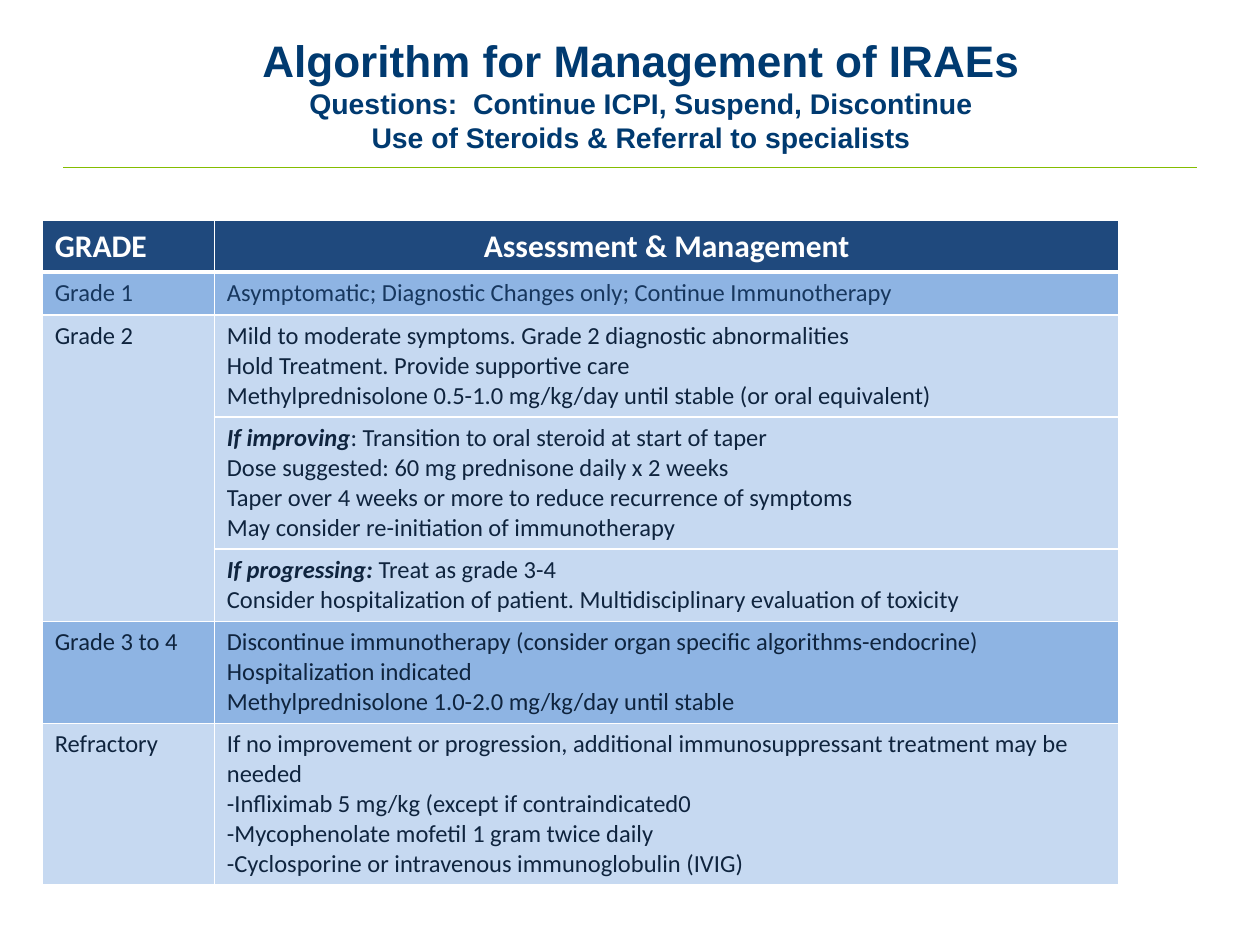
from lxml import etree
from pptx import Presentation
from pptx.dml.color import RGBColor
from pptx.enum.shapes import MSO_CONNECTOR
from pptx.enum.text import MSO_ANCHOR, MSO_AUTO_SIZE, PP_ALIGN
from pptx.oxml.ns import qn
from pptx.util import Cm, Pt

CENTER, LEFT = PP_ALIGN.CENTER, PP_ALIGN.LEFT
MIDDLE = MSO_ANCHOR.MIDDLE
NO_AUTOFIT = MSO_AUTO_SIZE.NONE
STRAIGHT = MSO_CONNECTOR.STRAIGHT

NAVY, GREEN, WHITE = "003A70", "84BD00", "FFFFFF"
HEADER_BLUE, MID_BLUE, PALE_BLUE = "1F497D", "8EB4E3", "C6D9F1"
GRADE_1_INK, INK = "17375E", "0F243E"

TITLE = [
    ("Algorithm for Management of IRAEs", 25.2),
    ("Questions:  Continue ICPI, Suspend, Discontinue", 16.2),
    ("Use of Steroids & Referral to specialists", 16.2),
]
HEADINGS = [("GRADE", LEFT), ("Assessment & Management", CENTER)]
GRADES = [
    ("Grade 1", MID_BLUE, GRADE_1_INK, [
        ("", ["Asymptomatic; Diagnostic Changes only; Continue Immunotherapy"]),
    ]),
    ("Grade 2", PALE_BLUE, INK, [
        ("", ["Mild to moderate symptoms. Grade 2 diagnostic abnormalities",
              "Hold Treatment. Provide supportive care",
              "Methylprednisolone 0.5-1.0 mg/kg/day until stable (or oral equivalent)"]),
        ("If improving", [": Transition to oral steroid at start of taper",
                          "Dose suggested: 60 mg prednisone daily x 2 weeks",
                          "Taper over 4 weeks or more to reduce recurrence of symptoms",
                          "May consider re-initiation of immunotherapy"]),
        ("If progressing: ", ["Treat as grade 3-4",
                              "Consider hospitalization of patient. "
                              "Multidisciplinary evaluation of toxicity"]),
    ]),
    ("Grade 3 to 4", MID_BLUE, INK, [
        ("", ["Discontinue immunotherapy (consider organ specific algorithms-endocrine)",
              "Hospitalization indicated",
              "Methylprednisolone 1.0-2.0 mg/kg/day until stable"]),
    ]),
    ("Refractory", PALE_BLUE, INK, [
        ("", ["If no improvement or progression, additional immunosuppressant "
              "treatment may be needed",
              "-Infliximab 5 mg/kg (except if contraindicated0",
              "-Mycophenolate mofetil 1 gram twice daily",
              "-Cyclosporine or intravenous immunoglobulin (IVIG)"]),
    ]),
]
COLUMN_WIDTHS = [3.47, 18.24]
ROW_HEIGHTS = [0.97, 0.87, 1.94, 2.52, 1.38, 1.94, 2.88]


def rgb(hex_color):
    return RGBColor.from_string(hex_color)


def write(paragraph, text, size=14, font="Calibri", color=INK, bold=False,
          italic=False, align=LEFT):
    paragraph.alignment = align
    run = paragraph.add_run()
    run.text = text
    run.font.size, run.font.name = Pt(size), font
    run.font.bold, run.font.italic = bold, italic
    run.font.color.rgb = rgb(color)


def next_paragraph(frame, index):
    return frame.add_paragraph() if index else frame.paragraphs[0]


def paint(cell, fill, top=1, bottom=1):
    properties = cell._tc.get_or_add_tcPr()
    for side, width in (("lnL", 1), ("lnR", 1), ("lnT", top), ("lnB", bottom)):
        border = etree.SubElement(properties, qn("a:" + side), w=str(Pt(width)))
        solid = etree.SubElement(border, qn("a:solidFill"))
        etree.SubElement(solid, qn("a:srgbClr"), val=WHITE)
    cell.fill.solid()
    cell.fill.fore_color.rgb = rgb(fill)


def add_title(slide):
    title = slide.shapes.title
    title.left, title.top, title.width, title.height = Cm(2.34), Cm(0.84), Cm(21.16), Cm(2.11)
    frame = title.text_frame
    frame.auto_size, frame.vertical_anchor = NO_AUTOFIT, MIDDLE
    for index, (line, size) in enumerate(TITLE):
        write(next_paragraph(frame, index), line, size=size, font="Arial",
              color=NAVY, bold=True, align=CENTER)


def add_rule(slide):
    rule = slide.shapes.add_connector(STRAIGHT, Cm(1.27), Cm(3.38), Cm(24.13), Cm(3.38))
    rule.line.color.rgb = rgb(GREEN)
    rule.line.width = Pt(0.75)
    etree.SubElement(rule._element.spPr, qn("a:effectLst"))


def add_grades(slide):
    table = slide.shapes.add_table(
        len(ROW_HEIGHTS), len(COLUMN_WIDTHS), Cm(0.85), Cm(4.45),
        Cm(sum(COLUMN_WIDTHS)), Cm(sum(ROW_HEIGHTS))).table
    for column, width in zip(table.columns, COLUMN_WIDTHS):
        column.width = Cm(width)
    for row, height in zip(table.rows, ROW_HEIGHTS):
        row.height = Cm(height)

    for column, (heading, align) in enumerate(HEADINGS):
        cell = table.cell(0, column)
        paint(cell, HEADER_BLUE, bottom=3)
        write(cell.text_frame.paragraphs[0], heading, size=18, color=WHITE,
              bold=True, align=align)

    first = 1
    for grade, fill, ink, steps in GRADES:
        for row, (lead, lines) in enumerate(steps, first):
            top = 3 if row == 1 else 1
            paint(table.cell(row, 0), fill, top=top)
            management = table.cell(row, 1)
            paint(management, fill, top=top)
            for index, line in enumerate(lines):
                paragraph = next_paragraph(management.text_frame, index)
                if lead and index == 0:
                    write(paragraph, lead, color=ink, bold=True, italic=True)
                write(paragraph, line, color=ink)
        grade_cell = table.cell(first, 0)
        write(grade_cell.text_frame.paragraphs[0], grade, color=ink)
        if len(steps) > 1:
            grade_cell.merge(table.cell(first + len(steps) - 1, 0))
        first += len(steps)


def main():
    deck = Presentation()
    deck.slide_width, deck.slide_height = Cm(25.4), Cm(19.05)
    slide = deck.slides.add_slide(deck.slide_layouts[5])
    add_rule(slide)
    add_title(slide)
    add_grades(slide)
    deck.save("out.pptx")


if __name__ == "__main__":
    main()
